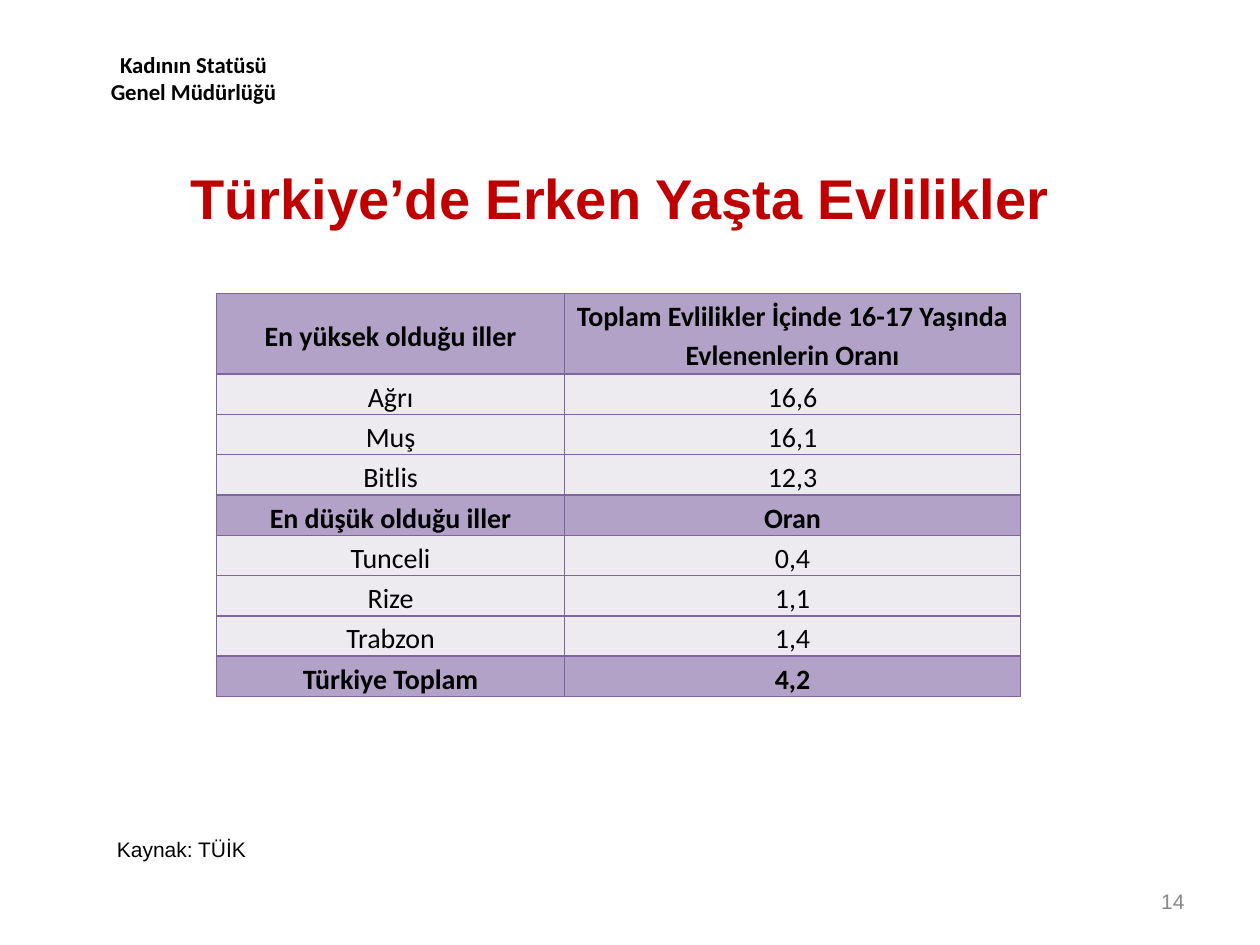
from lxml import etree
from pptx import Presentation
from pptx.dml.color import RGBColor
from pptx.enum import text as t
from pptx.oxml.ns import qn
from pptx.util import Inches, Pt

RED, BLACK, GREY = "C00000", "000000", "898989"
HEAD, BODY, EDGE = "B3A2C7", "EDEAF0", "8064A2"
MID = t.MSO_ANCHOR.MIDDLE
LEFT, CENTER, RIGHT = t.PP_ALIGN.LEFT, t.PP_ALIGN.CENTER, t.PP_ALIGN.RIGHT

# Label, rate, and whether the row is a heading
ROWS = [
    ("En yüksek olduğu iller",
     "Toplam Evlilikler İçinde 16-17 Yaşında Evlenenlerin Oranı", True),
    ("Ağrı", "16,6", False),
    ("Muş", "16,1", False),
    ("Bitlis", "12,3", False),
    ("En düşük olduğu iller", "Oran", True),
    ("Tunceli", "0,4", False),
    ("Rize", "1,1", False),
    ("Trabzon", "1,4", False),
    ("Türkiye Toplam", "4,2", True),
]


def color(code):
    return RGBColor.from_string(code)


def write(frame, words, size, font, code, align, bold=False):
    frame.text = words
    for para in frame.paragraphs:
        para.alignment = align
        for run in para.runs:
            run.font.size = Pt(size)
            run.font.name = font
            run.font.bold = bold
            run.font.color.rgb = color(code)


def place(shape, left, top, width, height):
    shape.left, shape.top = Inches(left), Inches(top)
    shape.width, shape.height = Inches(width), Inches(height)


def add_title(slide, words, box):
    title = slide.shapes.title
    place(title, *box)
    title.text_frame.vertical_anchor = MID
    write(title.text_frame, words, 32, "Arial", RED, CENTER, True)


def add_label(slide, words, box, size, font, code, align, bold=False,
              anchor=t.MSO_ANCHOR.TOP):
    frame = slide.shapes.add_textbox(*map(Inches, box)).text_frame
    frame.word_wrap = True
    frame.vertical_anchor = anchor
    write(frame, words, size, font, code, align, bold)


def add_edges(cell):
    props = cell._tc.get_or_add_tcPr()
    for spot, side in enumerate(("lnL", "lnR", "lnT", "lnB")):
        line = etree.Element(qn(f"a:{side}"), w=str(Pt(1)))
        fill = etree.SubElement(line, qn("a:solidFill"))
        etree.SubElement(fill, qn("a:srgbClr"), val=EDGE)
        props.insert(spot, line)


def fill_cell(cell, words, head, anchor):
    cell.fill.solid()
    cell.fill.fore_color.rgb = color(HEAD if head else BODY)
    cell.margin_left = cell.margin_right = Inches(0.07)
    cell.margin_top, cell.margin_bottom = Inches(0.01), 0
    cell.vertical_anchor = anchor
    write(cell.text_frame, words, 16, "Calibri", BLACK, CENTER, head)
    para = cell.text_frame.paragraphs[0]
    para.line_spacing = 1.15
    para.space_after = Pt(10)
    add_edges(cell)


def add_rates(slide):
    box = map(Inches, (1.72, 2.33, 6.38, 3.2))
    table = slide.shapes.add_table(len(ROWS), 2, *box).table
    for col, width in zip(table.columns, (2.76, 3.62)):
        col.width = Inches(width)
    for row, (name, rate, head) in enumerate(ROWS):
        table.rows[row].height = Inches(0.32 if row else 0.64)
        for col, words in enumerate((name, rate)):
            # The first label is centred; below it only the rates are
            anchor = MID if (row > 0) == (col > 0) else t.MSO_ANCHOR.TOP
            fill_cell(table.cell(row, col), words, head, anchor)


def main():
    prs = Presentation()
    prs.slide_width, prs.slide_height = Inches(10), Inches(7.5)
    slide = prs.slides.add_slide(prs.slide_layouts[5])

    # Office name and title
    add_label(slide, "Kadının Statüsü Genel Müdürlüğü", (0.67, 0.35, 1.73, 0.54),
              13, "Calibri", BLACK, CENTER, True)
    add_title(slide, "Türkiye’de Erken Yaşta Evlilikler", (0.31, 1.25, 9.22, 0.63))

    # Marriage rates by province
    add_rates(slide)

    # Source and page number
    add_label(slide, "Kaynak: TÜİK", (0.83, 6.59, 1.81, 0.3),
              12, "Arial", BLACK, LEFT)
    add_label(slide, "14", (7.17, 6.95, 2.33, 0.4),
              12, "Arial", GREY, RIGHT, anchor=MID)

    prs.save("out.pptx")


if __name__ == "__main__":
    main()
